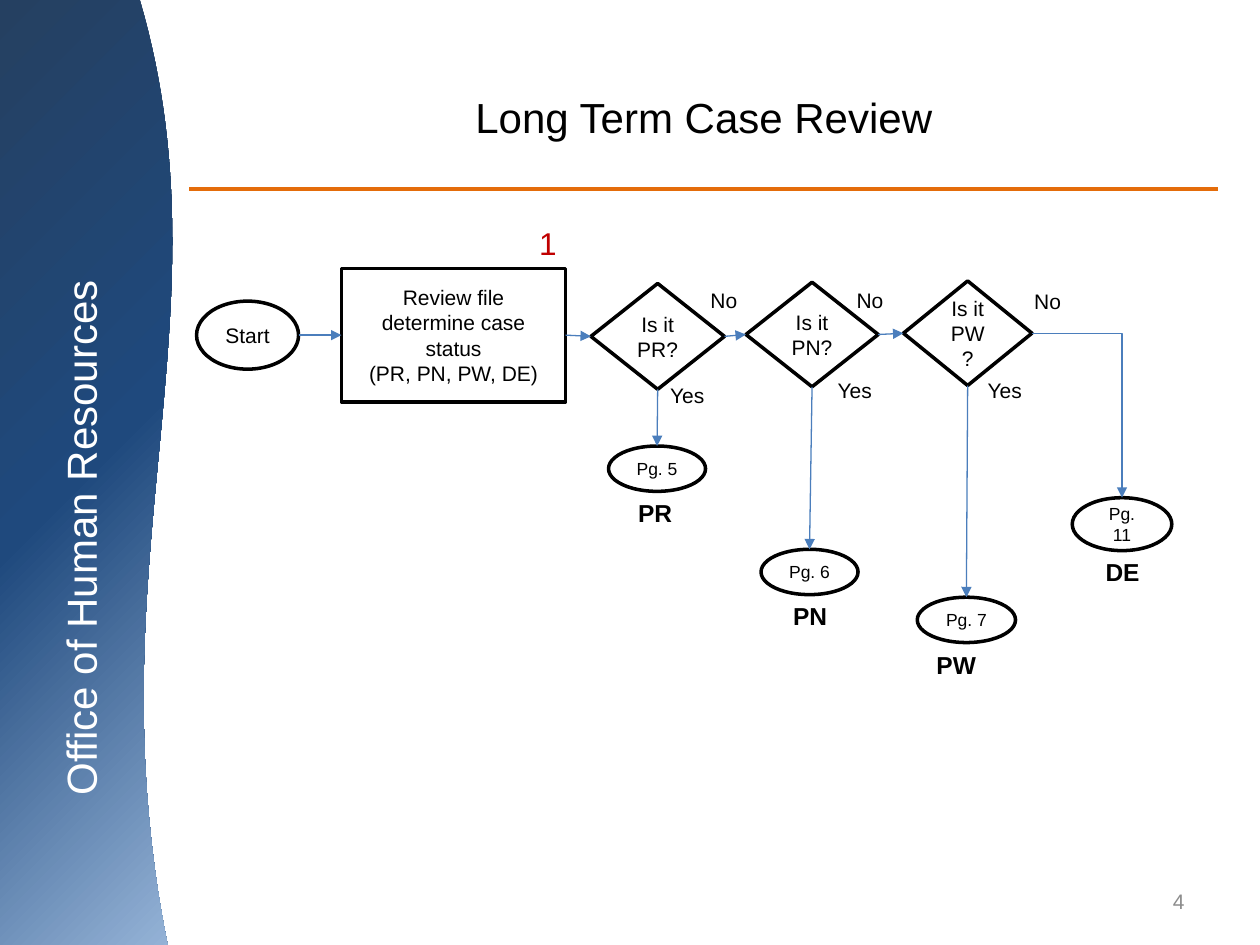
from lxml import etree
from pptx import Presentation
from pptx.dml import color
from pptx.enum import shapes, text
from pptx.oxml import ns, parse_xml
from pptx.util import Inches, Pt

FONT = "Arial"
BLACK, WHITE, BLUE = "000000", "FFFFFF", "4B7EBC"
CENTER, LEFT, RIGHT = text.PP_ALIGN.CENTER, text.PP_ALIGN.LEFT, text.PP_ALIGN.RIGHT
MIDDLE, TOP = text.MSO_ANCHOR.MIDDLE, text.MSO_ANCHOR.TOP
LINE, BENT = shapes.MSO_CONNECTOR.STRAIGHT, shapes.MSO_CONNECTOR.ELBOW
OVAL = shapes.MSO_SHAPE.OVAL
BOX = shapes.MSO_SHAPE.RECTANGLE
DECISION = shapes.MSO_SHAPE.FLOWCHART_DECISION
SIDE_TOP, SIDE_LEFT, SIDE_BOTTOM, SIDE_RIGHT = range(4)


def rgb(value):
    """Turn a hex string into a colour."""
    return color.RGBColor.from_string(value)


def set_text(sp, words, size, hex_color=BLACK, align=CENTER, anchor=MIDDLE, bold=False, wrap=True):
    """Fill a shape with formatted text."""
    tf = sp.text_frame
    tf.text = words
    tf.word_wrap = wrap
    tf.vertical_anchor = anchor
    for p in tf.paragraphs:
        p.alignment = align
        for r in p.runs:
            r.font.name = FONT
            r.font.size = Pt(size)
            r.font.bold = bold
            r.font.color.rgb = rgb(hex_color)


def add_label(s, words, left, top, width, height, size, **style):
    """Add a text box."""
    sp = s.shapes.add_textbox(Inches(left), Inches(top), Inches(width), Inches(height))
    set_text(sp, words, size, **style)
    return sp


def add_code(s, code, left, top):
    """Add the bold case code below a page oval."""
    add_label(s, code, left, top, 0.56, 0.34, 14, anchor=TOP, bold=True)


def add_node(s, kind, words, left, top, width, height, size=12):
    """Add an outlined flowchart node."""
    sp = s.shapes.add_shape(kind, Inches(left), Inches(top), Inches(width), Inches(height))
    sp.shadow.inherit = False
    sp.fill.solid()
    sp.fill.fore_color.rgb = rgb(WHITE)
    sp.line.color.rgb = rgb(BLACK)
    sp.line.width = Pt(2)
    set_text(sp, words, size)
    return sp


def add_line(s, x1, y1, x2, y2, hex_color, width, kind=LINE):
    """Add a connector without a shadow."""
    line = s.shapes.add_connector(kind, Inches(x1), Inches(y1), Inches(x2), Inches(y2))
    line.line.color.rgb = rgb(hex_color)
    line.line.width = Pt(width)
    etree.SubElement(line._element.spPr, ns.qn("a:effectLst"))
    return line


def add_arrow(s, start, start_side, end, end_side, kind=LINE):
    """Join two nodes with an arrow."""
    arrow = add_line(s, 0, 0, 1, 1, BLUE, 0.75, kind)
    if start_side is None:
        arrow.begin_x = start.left + start.width
        arrow.begin_y = start.top + start.height // 2
    else:
        arrow.begin_connect(start, start_side)
    arrow.end_connect(end, end_side)
    etree.SubElement(arrow.line._get_or_add_ln(), ns.qn("a:tailEnd"), type="triangle")
    if kind == BENT:
        arrow._element.spPr.find(ns.qn("a:prstGeom")).set("prst", "bentConnector2")


def bezier(points, t):
    """Return the point at t on a cubic curve."""
    weights = ((1 - t) ** 3, 3 * t * (1 - t) ** 2, 3 * t * t * (1 - t), t ** 3)
    return tuple(Inches(sum(w * p[axis] for w, p in zip(weights, points))) for axis in (0, 1))


def add_side_band(s):
    """Add the curved gradient band with its vertical name."""
    curve = [(1.11, 0), (1.84, 2.51), (0.72, 4.46), (1.33, 7.5)]
    steps = 60
    builder = s.shapes.build_freeform(0, 0)
    edge = [bezier(curve, i / steps) for i in range(steps + 1)]
    builder.add_line_segments(edge + [(0, Inches(7.5))], close=True)
    band = builder.convert_to_shape()
    band.shadow.inherit = False
    band.line.fill.background()
    band.fill.gradient()
    band.fill.gradient_angle = 315
    stops = band._element.spPr.find(".//" + ns.qn("a:gsLst"))
    stops.clear()
    for position, value in ((0, "254061"), (50, "1F497D"), (100, "95B3D7")):
        stops.append(parse_xml(
            f'<a:gs {ns.nsdecls("a")} pos="{position * 1000}"><a:srgbClr val="{value}"/></a:gs>'))
    name = add_label(s, "Office of Human Resources", -2.12, 3.99, 5.47, 0.56, 24,
                     hex_color=WHITE, anchor=TOP)
    name.text_frame.margin_top = Inches(0.1)
    name.rotation = 270


def add_title(s):
    """Place the title and the rule below it."""
    add_line(s, 1.5, 1.5, 9.67, 1.5, "E46C0A", 2.25)
    title = s.shapes.title
    title.left, title.top, title.width, title.height = map(Inches, (1.5, 0.3, 8.17, 1.25))
    set_text(title, "Long Term Case Review", 24)


def add_flow(s):
    """Add the flowchart."""
    start = add_node(s, OVAL, "Start", 1.56, 2.39, 0.81, 0.54)
    review = add_node(s, BOX, "Review file determine case status\n(PR, PN, PW, DE)",
                      2.71, 2.13, 1.78, 1.06)
    add_arrow(s, start, None, review, SIDE_LEFT)
    add_label(s, "1", 4.18, 1.73, 0.26, 0.4, 18, hex_color="C00000", align=LEFT, anchor=TOP)

    branches = [
        ("PR", (4.69, 2.25, 1.06, 0.84), "Pg. 5", (4.83, 3.54, 0.77, 0.36),
         (4.92, 3.9), (5.54, 2.23), (5.22, 2.99)),
        ("PN", (5.92, 2.24, 1.05, 0.83), "Pg. 6", (6.04, 4.36, 0.77, 0.36),
         (6.15, 4.72), (6.7, 2.23), (6.55, 2.95)),
        ("PW", (7.17, 2.23, 1.02, 0.83), "Pg. 7", (7.28, 4.74, 0.78, 0.36),
         (7.31, 5.11), (8.11, 2.24), (7.74, 2.95)),
    ]
    previous = review
    for code, diamond, page, oval, code_at, no_at, yes_at in branches:
        question = add_node(s, DECISION, f"Is it {code}?", *diamond)
        target = add_node(s, OVAL, page, *oval, size=10)
        add_arrow(s, previous, SIDE_RIGHT, question, SIDE_LEFT)
        add_arrow(s, question, SIDE_BOTTOM, target, SIDE_TOP)
        add_code(s, code, *code_at)
        add_label(s, "No", *no_at, 0.42, 0.3, 12, align=LEFT, anchor=TOP, wrap=False)
        add_label(s, "Yes", *yes_at, 0.48, 0.3, 12, align=LEFT, anchor=TOP, wrap=False)
        previous = question

    last = add_node(s, OVAL, "Pg. 11", 8.51, 3.95, 0.79, 0.42, size=10)
    add_arrow(s, previous, SIDE_RIGHT, last, SIDE_TOP, BENT)
    add_code(s, "DE", 8.63, 4.37)


def main():
    """Build and save the slide."""
    prs = Presentation()
    prs.slide_width, prs.slide_height = Inches(10), Inches(7.5)
    s = prs.slides.add_slide(prs.slide_layouts[5])
    add_side_band(s)
    add_title(s)
    add_flow(s)
    add_label(s, "4", 7.17, 6.95, 2.33, 0.4, 12, hex_color="8C8C8C", align=RIGHT)
    prs.save("out.pptx")


if __name__ == "__main__":
    main()
